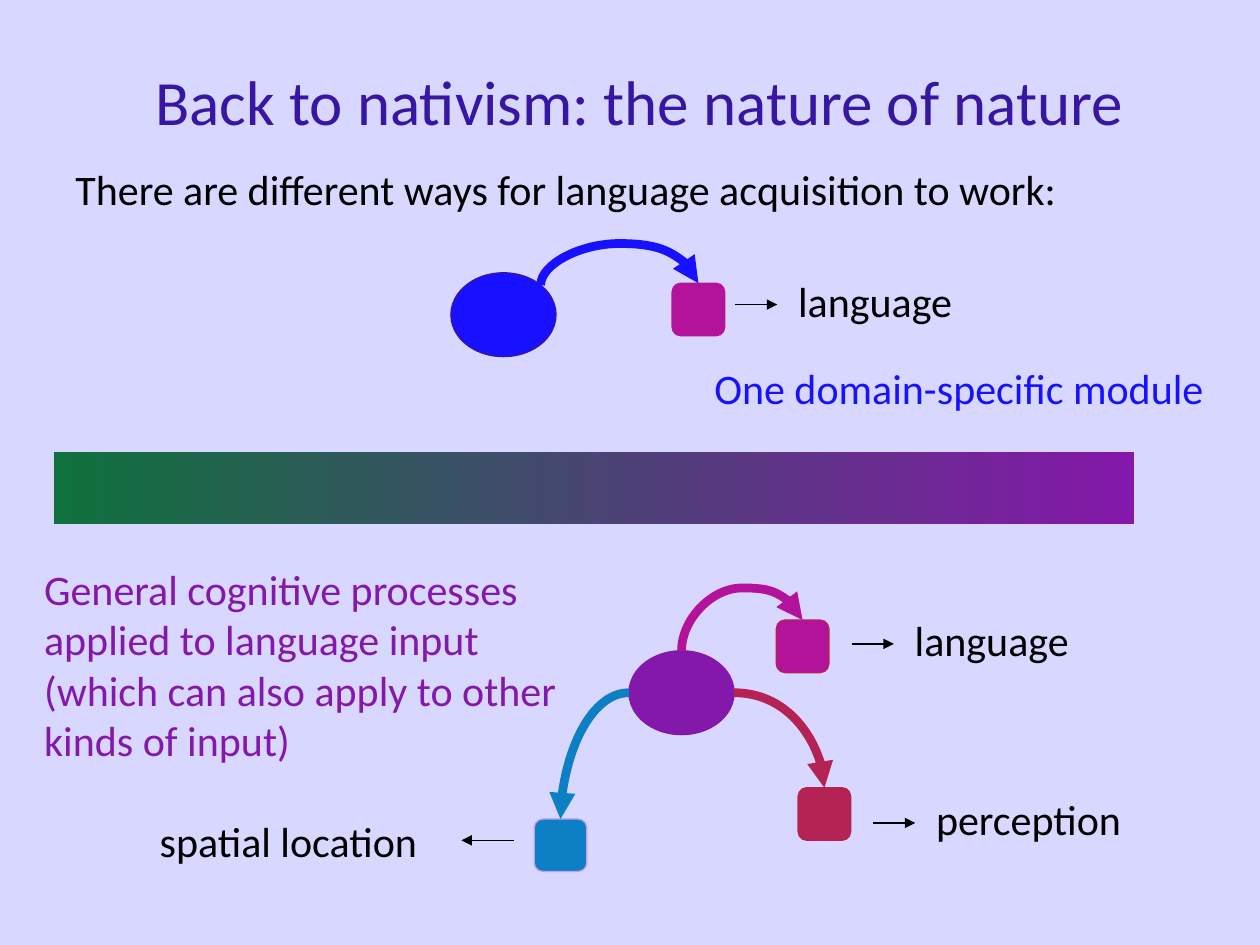
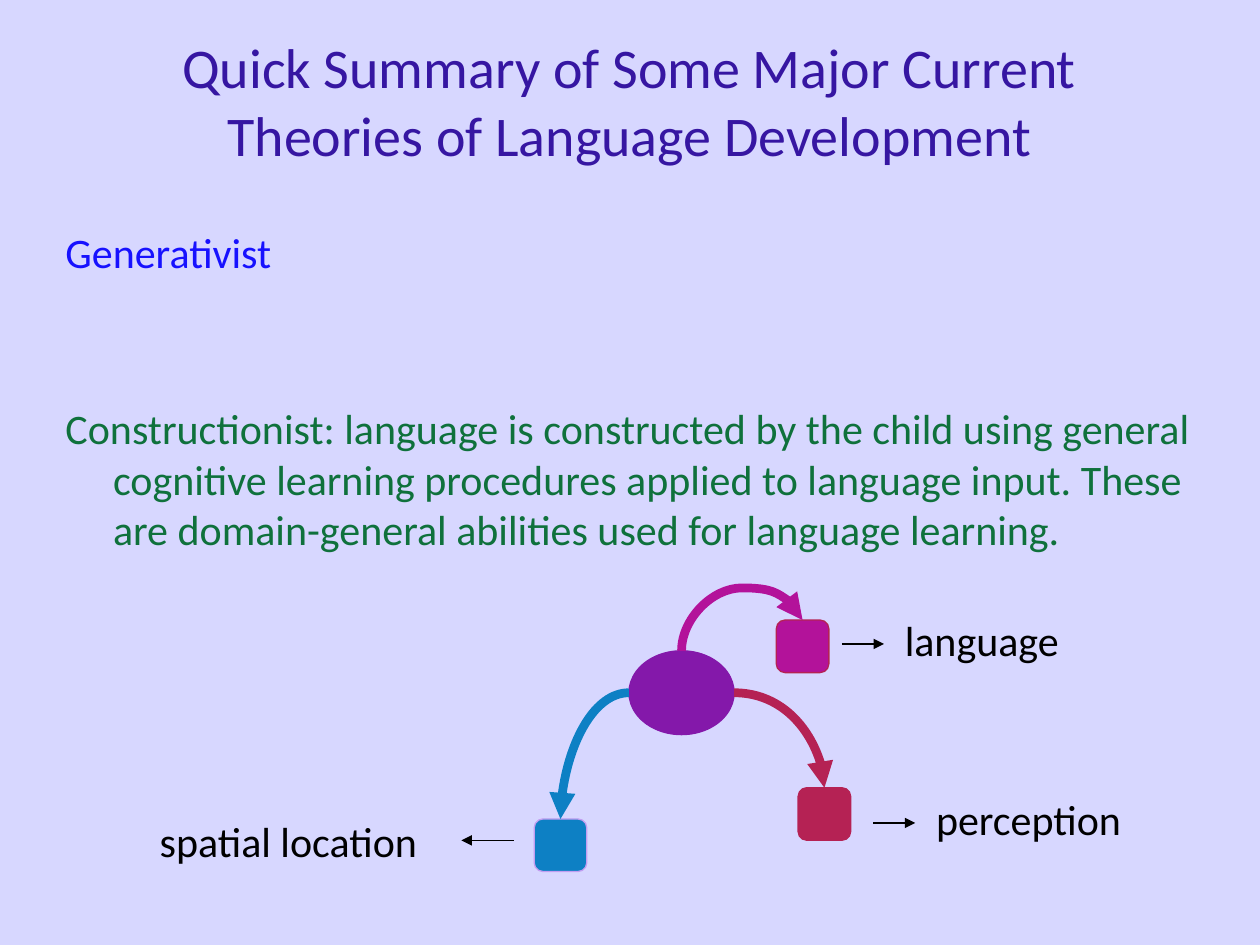
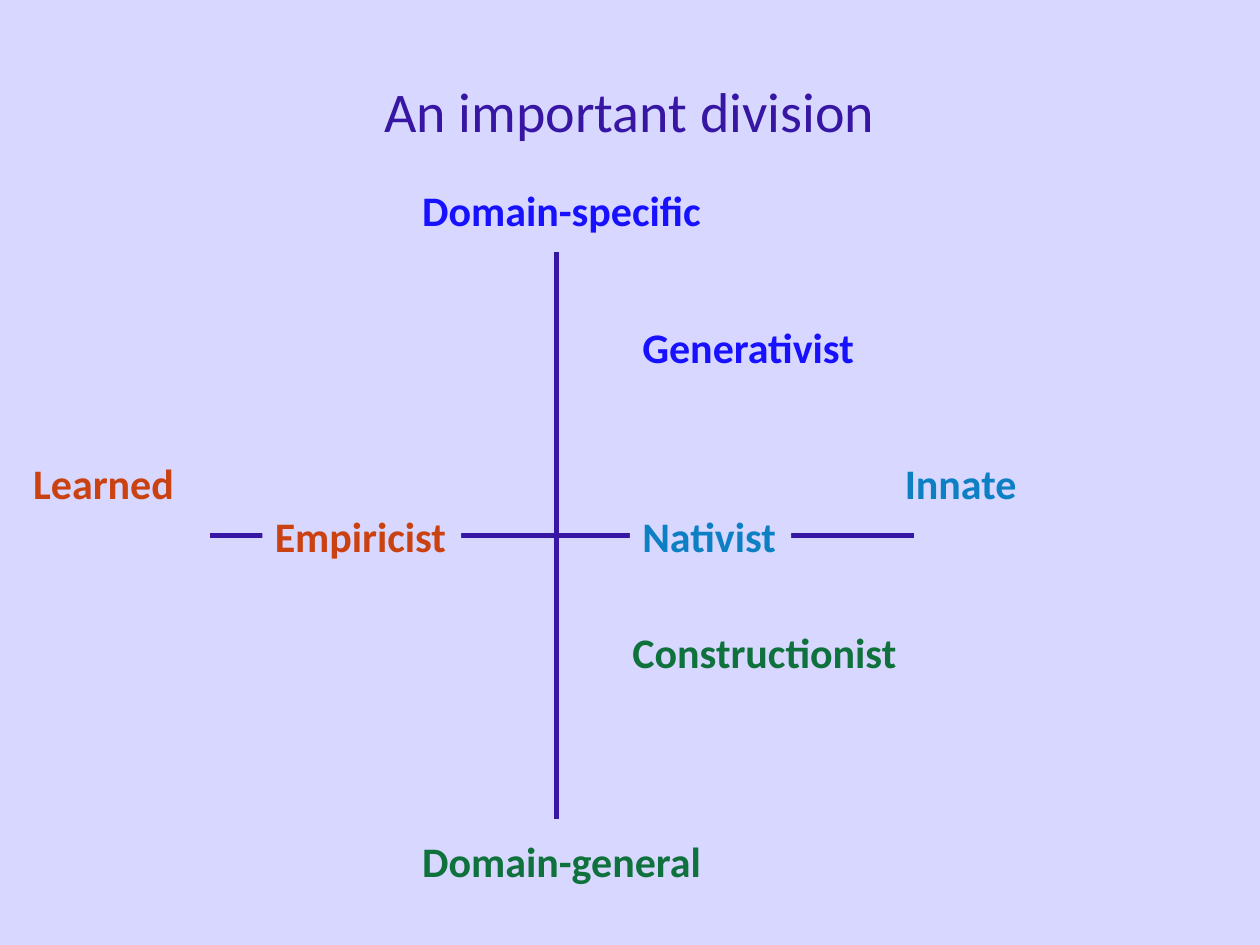
from dataclasses import dataclass
from math import sqrt

from lxml.etree import SubElement
from pptx import Presentation
from pptx.dml.color import RGBColor as Rgb
from pptx.enum.shapes import MSO_CONNECTOR as Link, MSO_SHAPE as Kind
from pptx.enum.text import MSO_ANCHOR as Anchor, MSO_AUTO_SIZE as Fit, PP_ALIGN as Align
from pptx.oxml.ns import qn
from pptx.util import Cm, Pt


@dataclass(frozen=True)
class Theme:
    font: str = "Calibri"
    back: str = "D7D7FF"
    ink: str = "3616A2"
    black: str = "000000"
    blue: str = "1711FF"
    purple: str = "8418AA"
    pink: str = "B3129A"
    red: str = "B52254"
    sky: str = "0D80C4"
    lilac: str = "C29EF1"
    green: str = "0F713C"
    rust: str = "CA4112"
    large: int = 36
    head: int = 32
    text: int = 24
    thin: float = 0.75
    axis: float = 3
    thick: float = 5


T = Theme()
ROW = 1.27        # height of a one-line label
BOX = 1.06        # side of a module box
OVAL = 2.12, 1.69
# Connection sites of an ellipse
TOP, LEFT, RIGHT, CORNER = 0, 2, 6, 7


def rgb(code):
    return Rgb.from_string(code)


class Deck:
    def __init__(self):
        self.prs = Presentation()
        self.prs.slide_width, self.prs.slide_height = Cm(25.4), Cm(19.05)
        fill = self.prs.slide_master.background.fill
        fill.solid()
        fill.fore_color.rgb = rgb(T.back)
        self.page = None

    def start(self, title, x, y, width, size=T.head):
        self.page = self.prs.slides.add_slide(self.prs.slide_layouts[6]).shapes
        box = self.text(title, x, y, width, 3.18, T.ink, size)
        box.text_frame.vertical_anchor = Anchor.MIDDLE
        box.text_frame.paragraphs[0].alignment = Align.CENTER

    def style(self, para, color, size=T.text, bold=False):
        font = para.font
        font.name, font.size, font.bold = T.font, Pt(size), bold
        font.color.rgb = rgb(color)

    def text(self, words, x, y, width, height, color, size=T.text):
        box = self.page.add_textbox(Cm(x), Cm(y), Cm(width), Cm(height))
        box.text_frame.word_wrap = True
        para = box.text_frame.paragraphs[0]
        para.text = words
        self.style(para, color, size)
        return box

    def label(self, words, x, y, width, color=T.black, bold=False, fill=None):
        box = self.text(words, x, y, width, ROW, color)
        frame = box.text_frame
        frame.word_wrap, frame.auto_size = False, Fit.SHAPE_TO_FIT_TEXT
        frame.paragraphs[0].font.bold = bold
        if fill:
            box.fill.solid()
            box.fill.fore_color.rgb = rgb(fill)

    def body(self, items, x, y, width, height):
        """Hanging paragraphs, each given as words, colour and space before."""
        frame = self.page.add_textbox(Cm(x), Cm(y), Cm(width), Cm(height)).text_frame
        frame.word_wrap = True
        for n, (words, color, gap) in enumerate(items):
            para = frame.add_paragraph() if n else frame.paragraphs[0]
            para.text = words
            para.space_before = Pt(gap)
            self.style(para, color)
            props = para._p.get_or_add_pPr()
            props.set("marL", str(Cm(0.96)))
            props.set("indent", str(Cm(-0.96)))

    def shape(self, kind, x, y, width, height, fill, edge=None):
        item = self.page.add_shape(kind, Cm(x), Cm(y), Cm(width), Cm(height))
        item.shadow.inherit = False
        item.fill.solid()
        item.fill.fore_color.rgb = rgb(fill)
        item.line.color.rgb = rgb(edge or fill)
        item.line.width = Pt(T.thin)
        return item

    def oval(self, x, y, fill, edge=None):
        return self.shape(Kind.OVAL, x, y, *OVAL, fill, edge)

    def box(self, x, y, fill, edge=None):
        return self.shape(Kind.ROUNDED_RECTANGLE, x, y, BOX, BOX, fill, edge)

    def bar(self, x, y, width, height, first, last):
        item = self.shape(Kind.RECTANGLE, x, y, width, height, first, T.back)
        item.fill.gradient()
        item.fill.gradient_angle = 0
        for stop, color, place in zip(item.fill.gradient_stops, (first, last), (0, 1)):
            stop.color.rgb = rgb(color)
            stop.position = place

    def link(self, kind, ends, color, width, head=False):
        item = self.page.add_connector(kind, *(int(v) for v in ends))
        item.line.color.rgb = rgb(color)
        item.line.width = Pt(width)
        props = item.element.spPr
        if head:
            SubElement(props.get_or_add_ln(), qn("a:tailEnd"), type="triangle")
        SubElement(props, qn("a:effectLst"))
        return item

    def line(self, x1, y1, x2, y2, color=T.black, width=T.thin, head=False):
        self.link(Link.STRAIGHT, [Cm(v) for v in (x1, y1, x2, y2)], color, width, head)

    def join(self, item, oval, site, box):
        """Tie a curve to a site of the oval and to the top of the box."""
        tie = item.element.nvCxnSpPr.cNvCxnSpPr
        begin, end = tie.get_or_add_stCxn(), tie.get_or_add_endCxn()
        begin.id, begin.idx = oval.shape_id, site
        end.id, end.idx = box.shape_id, 0

    def hop(self, oval, site, box, rise, color):
        """Curve that climbs from the oval and drops onto the box."""
        x1, y1 = oval.left + oval.width / 2, oval.top
        if site == CORNER:
            x1 += oval.width / 2 / sqrt(2)
            y1 += oval.height / 2 * (1 - 1 / sqrt(2))
        x2, y2 = box.left + box.width / 2, box.top
        wide, tall = y1 - y2, x2 - x1     # size before the quarter turn
        left, top = (x1 + x2 - wide) / 2, (y1 + y2 - tall) / 2
        item = self.link(Link.CURVE, (left, top, left + wide, top + tall),
                         color, T.thick, True)
        props = item.element.spPr
        props.xfrm.set("rot", str(270 * 60000))
        SubElement(props.find(".//" + qn("a:avLst")), qn("a:gd"), name="adj1",
                   fmla=f"val {round(Cm(rise) / wide * 100000)}")
        self.join(item, oval, site, box)

    def turn(self, oval, site, box, color):
        """Curve that leaves the oval sideways and drops onto the box."""
        x1 = oval.left + (oval.width if site == RIGHT else 0)
        ends = (x1, oval.top + oval.height / 2, box.left + box.width / 2, box.top)
        item = self.link(Link.CURVE, ends, color, T.thick, True)
        item.element.spPr.find(qn("a:prstGeom")).set("prst", "curvedConnector2")
        self.join(item, oval, site, box)

    def output(self, words, x, y, width):
        """Short arrow to the right with a label after it."""
        self.line(x, y, x + 0.85, y, head=True)
        self.label(words, x + 1.02, y - 0.71, width)

    def general(self, x):
        """One general process that feeds three boxes; x starts the language arrow."""
        mind = self.oval(12.68, 13.12, T.purple)
        speech = self.box(15.65, 12.5, T.pink, T.red)
        self.hop(mind, TOP, speech, 1.27, T.pink)
        sense = self.box(16.09, 15.88, T.red)
        self.turn(mind, RIGHT, sense, T.red)
        space = self.box(10.77, 16.51, T.sky, T.lilac)
        self.turn(mind, LEFT, space, T.sky)
        self.output("language", x, 12.98, 3.66)
        self.output("perception", 17.6, 16.59, 4.29)
        self.line(10.36, 16.94, 9.3, 16.94, head=True)
        self.label("spatial location", 2.97, 16.31, 5.77)


def nature(deck):
    deck.start("Back to nativism: the nature of nature", 0.41, 0.43, 24.97, T.large)
    deck.body([("There are different ways for language acquisition to work:",
                T.black, 4.8)], 1.27, 3.18, 23.29, 11.43)
    deck.text("General cognitive processes applied to language input "
              "(which can also apply to other kinds of input)",
              0.64, 11.23, 11.23, 4.37, T.purple)
    deck.label("One domain-specific module", 14.15, 7.19, 10.46, T.blue)
    mind = deck.oval(9.09, 5.5, T.blue, T.ink)
    speech = deck.box(13.55, 5.71, T.pink)
    deck.hop(mind, CORNER, speech, 0.85, T.blue)
    deck.output("language", 14.82, 6.14, 3.66)
    deck.general(17.17)
    deck.bar(1.07, 9.1, 21.8, 1.48, T.green, T.purple)


def theories(deck):
    deck.start("Quick Summary of Some Major Current Theories of Language Development",
               1.9, 0.43, 21.59)
    deck.body([
        ("Generativist", T.blue, 4.8),
        ("Constructionist: language is constructed by the child using general "
         "cognitive learning procedures applied to language input. These are "
         "domain-general abilities used for language learning.", T.green, 72),
    ], 1.07, 4.44, 23.93, 13.54)
    deck.general(16.97)


def division(deck):
    deck.start("An important division", 1.9, 0.64, 21.59)
    deck.line(11.22, 5.08, 11.22, 16.51, T.ink, T.axis)
    deck.line(18.42, 10.8, 4.24, 10.8, T.ink, T.axis)
    for words, x, y, width, color, fill in (
        ("Generativist", 12.7, 6.35, 4.83, T.blue, None),
        ("Constructionist", 12.5, 12.5, 5.89, T.green, None),
        ("Domain-specific", 8.26, 3.6, 6.2, T.blue, None),
        ("Domain-general", 8.26, 16.72, 6.2, T.green, None),
        ("Innate", 17.99, 9.1, 2.79, T.sky, None),
        ("Learned", 0.42, 9.1, 3.38, T.rust, None),
        ("Empiricist", 5.29, 10.16, 4.01, T.rust, T.back),
        ("Nativist", 12.7, 10.16, 3.25, T.sky, T.back),
    ):
        deck.label(words, x, y, width, color, True, fill)


def main():
    deck = Deck()
    for build in (nature, theories, division):
        build(deck)
    deck.prs.save("out.pptx")


if __name__ == "__main__":
    main()
